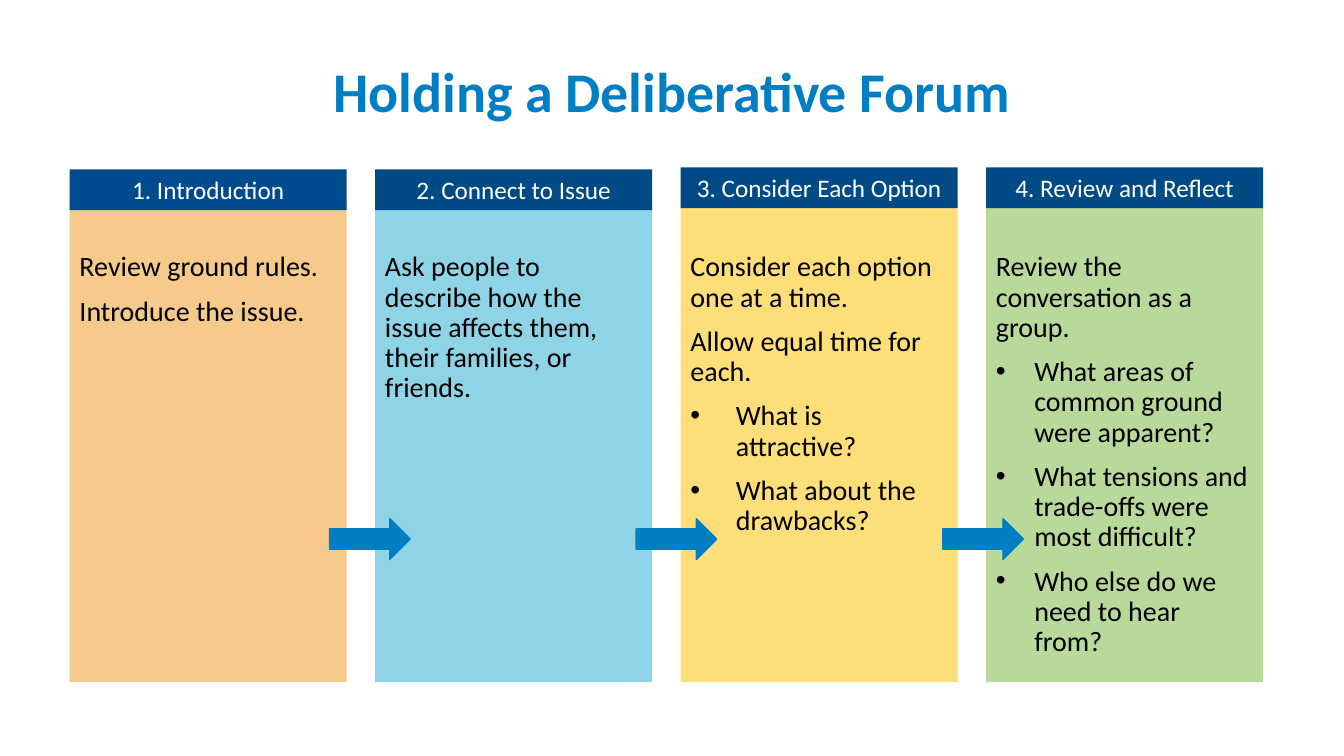
from lxml.etree import SubElement
from pptx import Presentation
from pptx.dml.color import RGBColor
from pptx.enum.shapes import MSO_SHAPE
from pptx.enum.text import MSO_ANCHOR, PP_ALIGN
from pptx.oxml.ns import qn
from pptx.util import Pt

BLUE = RGBColor(0x00, 0x7E, 0xC4)
NAVY = RGBColor(0x00, 0x4A, 0x85)
INTRODUCTION_NAVY = RGBColor(0x00, 0x4B, 0x8D)
ORANGE = RGBColor(0xF0, 0xA8, 0x3C)
AQUA = RGBColor(0x5F, 0xC2, 0xDC)
YELLOW = RGBColor(0xFD, 0xDB, 0x6B)
GREEN = RGBColor(0x95, 0xC6, 0x65)
BLACK = RGBColor(0x00, 0x00, 0x00)
WHITE = RGBColor(0xFF, 0xFF, 0xFF)

COLUMN_LEFT, COLUMN_PITCH, COLUMN_WIDTH = 49.7, 218.2, 198
ARROW_LEFT, ARROW_PITCH = 235.4, 219

STEPS = [
    ("1. Introduction", INTRODUCTION_NAVY, 121, ORANGE, 60, 0,
     ["Review ground rules.", "Introduce the issue."], []),
    ("2. Connect to Issue", NAVY, 121, AQUA, 70, 0,
     ["Ask people to describe how the issue affects them, their families, or friends."], []),
    ("3. Consider Each Option", NAVY, 119.5, YELLOW, 90, 32.4,
     ["Consider each option one at a time.", "Allow equal time for each."],
     ["What is attractive?", "What about the drawbacks?"]),
    ("4. Review and Reflect", NAVY, 119.5, GREEN, 65, 27.4,
     ["Review the conversation as a group."],
     ["What areas of common ground were apparent?",
      "What tensions and trade-offs were most difficult?",
      "Who else do we need to hear from?"]),
]


def write_text(paragraph, text, size=20, color=BLACK, bold=False,
               align=PP_ALIGN.LEFT, line_spacing=1.0, space_before=0, indent=0):
    paragraph.alignment = align
    paragraph.line_spacing = line_spacing
    paragraph.space_before = Pt(space_before)
    run = paragraph.add_run()
    run.text = text
    run.font.name = "Calibri"
    run.font.size = Pt(size)
    run.font.bold = bold
    run.font.color.rgb = color
    if indent:
        properties = paragraph._p.get_or_add_pPr()
        properties.set("marL", str(Pt(indent)))
        properties.set("indent", str(-Pt(indent)))
        SubElement(properties, qn("a:buFont"), typeface="Arial")
        SubElement(properties, qn("a:buChar"), char="•")


class ForumSlide:
    """Draws the elements of the forum slide in one style."""

    def __init__(self, presentation):
        self.slide = presentation.slides.add_slide(presentation.slide_layouts[6])

    def title(self, text):
        box = self.slide.shapes.add_textbox(Pt(66), Pt(15), Pt(828), Pt(104.4))
        frame = box.text_frame
        frame.word_wrap = True
        frame.vertical_anchor = MSO_ANCHOR.MIDDLE
        write_text(frame.paragraphs[0], text, size=40, color=BLUE, bold=True,
                   align=PP_ALIGN.CENTER, line_spacing=0.9)

    def block(self, kind, left, top, width, height, color):
        shape = self.slide.shapes.add_shape(kind, Pt(left), Pt(top), Pt(width), Pt(height))
        shape.shadow.inherit = False
        shape.fill.solid()
        shape.fill.fore_color.rgb = color
        shape.line.fill.background()
        shape.text_frame.word_wrap = True
        return shape

    def panel(self, left, color, opacity, statements, questions, indent):
        shape = self.block(MSO_SHAPE.RECTANGLE, left, 144.5, COLUMN_WIDTH, 342.7, color)
        color_element = shape.fill._xPr.find(qn("a:solidFill"))[0]
        SubElement(color_element, qn("a:alpha"), val=str(opacity * 1000))
        frame = shape.text_frame
        frame.vertical_anchor = MSO_ANCHOR.TOP
        frame.margin_top = Pt(36)
        lines = [(text, 0) for text in statements] + [(text, indent) for text in questions]
        for index, (text, line_indent) in enumerate(lines):
            paragraph = frame.add_paragraph() if index else frame.paragraphs[0]
            write_text(paragraph, text, line_spacing=0.9,
                       space_before=10 if index else 0, indent=line_indent)

    def header(self, left, top, text, color):
        shape = self.block(MSO_SHAPE.RECTANGLE, left, top, COLUMN_WIDTH, 29.1, color)
        write_text(shape.text_frame.paragraphs[0], text, size=18, color=WHITE,
                   align=PP_ALIGN.CENTER)

    def arrow(self, left):
        shape = self.block(MSO_SHAPE.RIGHT_ARROW, left, 370.5, 57.6, 29.1, BLUE)
        shape.line.color.rgb = BLUE
        shape.line.width = Pt(1)


def main():
    presentation = Presentation()
    presentation.slide_width = Pt(960)
    presentation.slide_height = Pt(540)
    forum = ForumSlide(presentation)
    forum.title("Holding a Deliberative Forum")
    for index, step in enumerate(STEPS):
        heading, header_color, top, color, opacity, indent, statements, questions = step
        left = COLUMN_LEFT + index * COLUMN_PITCH
        forum.panel(left, color, opacity, statements, questions, indent)
        forum.header(left, top, heading, header_color)
    for index in range(len(STEPS) - 1):
        forum.arrow(ARROW_LEFT + index * ARROW_PITCH)
    presentation.save("out.pptx")


if __name__ == "__main__":
    main()
